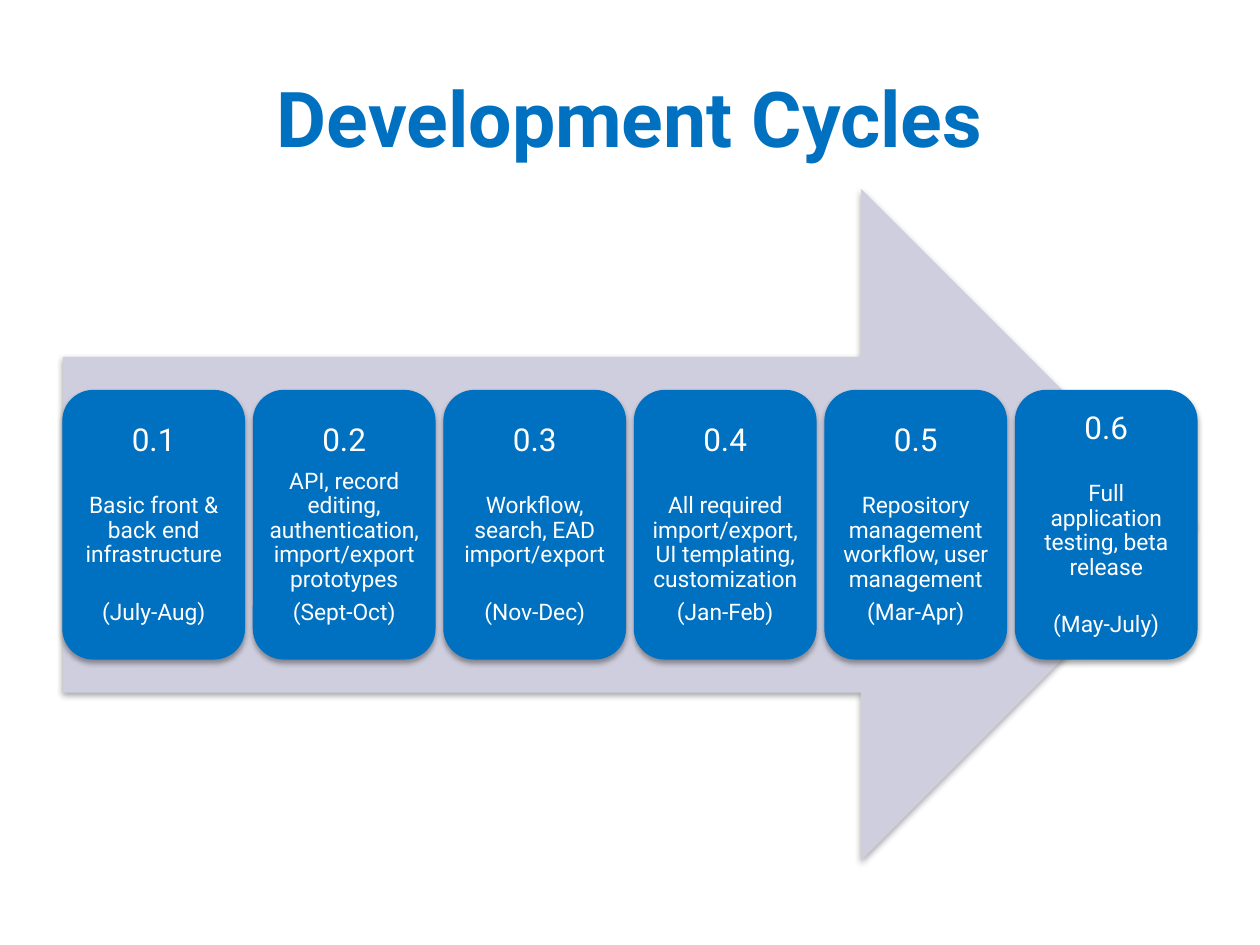
import pptx
import pptx.dml.color
import pptx.enum.shapes
import pptx.enum.text
import pptx.oxml
import pptx.oxml.ns
import pptx.util
from pptx.util import Inches, Pt

# Content: version, work, months, blank lines before work and before months
TITLE = "Development Cycles"
CYCLES = [
    ("0.1", "Basic front & back end infrastructure", "(July-Aug)", 1, 1),
    ("0.2", "API, record editing, authentication, import/export prototypes",
     "(Sept-Oct)", 0, 0),
    ("0.3", "Workflow, search, EAD import/export", "(Nov-Dec)", 1, 1),
    ("0.4", "All required import/export, UI templating, customization",
     "(Jan-Feb)", 1, 0),
    ("0.5", "Repository management workflow, user management",
     "(Mar-Apr)", 1, 0),
    ("0.6", "Full application testing, beta release", "(May-July)", 1, 1),
]

THEME = {
    "font": "Roboto",
    "blue": pptx.dml.color.RGBColor.from_string("0070C0"),
    "lavender": pptx.dml.color.RGBColor.from_string("CECEDE"),
    "white": pptx.dml.color.RGBColor.from_string("FFFFFF"),
    "title": 44,
    "version": 18,
    "detail": 13,
    "blank_line": 14,
    "space_after": 0.35,
}

# Layout in inches
LEFT, SPAN = 0.5, 9
ARROW_TOP, ARROW_HEIGHT = 1.5, 5.33
CARD_WIDTH, CARD_HEIGHT = 1.44, 2.13
CARD_TOP = ARROW_TOP + (ARROW_HEIGHT - CARD_HEIGHT) / 2
PITCH = (SPAN - CARD_WIDTH) / (len(CYCLES) - 1)

SHADOW = (
    f'<a:effectLst {pptx.oxml.ns.nsdecls("a")}>'
    f'<a:outerShdw blurRad="{Pt(3.1)}" dist="{Pt(1.8)}" dir="5400000" rotWithShape="0">'
    '<a:srgbClr val="000000"><a:alpha val="35000"/></a:srgbClr>'
    '</a:outerShdw></a:effectLst>'
)


def add_block(slide, preset, left, top, width, height, fill):
    block = slide.shapes.add_shape(
        preset, Inches(left), Inches(top), Inches(width), Inches(height))
    block.fill.solid()
    block.fill.fore_color.rgb = fill
    block.line.fill.background()
    block.shadow.inherit = False
    properties = block._element.spPr
    effects = properties.find(pptx.oxml.ns.qn("a:effectLst"))
    properties.replace(effects, pptx.oxml.parse_xml(SHADOW))
    return block


def style(paragraph, size, color, bold=False):
    paragraph.alignment = pptx.enum.text.PP_ALIGN.CENTER
    for run in paragraph.runs:
        run.font.name = THEME["font"]
        run.font.size = Pt(size)
        run.font.bold = bold
        run.font.color.rgb = color


def add_card(slide, left, version, work, months, work_gap, months_gap):
    card = add_block(slide, pptx.enum.shapes.MSO_SHAPE.ROUNDED_RECTANGLE,
                     left, CARD_TOP, CARD_WIDTH, CARD_HEIGHT, THEME["blue"])
    card.line.color.rgb = THEME["blue"]
    card.line.width = Pt(0.75)
    frame = card.text_frame
    frame.word_wrap = True
    frame.vertical_anchor = pptx.enum.text.MSO_ANCHOR.MIDDLE
    frame.margin_left = frame.margin_right = Inches(0.05)
    frame.margin_top = frame.margin_bottom = Inches(0.05)
    frame.text = "\n".join((version, work, months))
    sizes = (THEME["version"], THEME["detail"], THEME["detail"])
    gaps = (0, work_gap, months_gap)
    for paragraph, size, gap in zip(frame.paragraphs, sizes, gaps):
        style(paragraph, size, THEME["white"])
        paragraph.line_spacing = 0.9
        paragraph.space_before = Pt(gap * THEME["blank_line"])
        paragraph.space_after = Pt(size * THEME["space_after"])


def main():
    deck = pptx.Presentation()
    deck.slide_width, deck.slide_height = Inches(10), Inches(7.5)
    slide = deck.slides.add_slide(deck.slide_layouts[6])

    # Title
    heading = slide.shapes.add_textbox(
        Inches(LEFT), Inches(0.3), Inches(SPAN), Inches(1.25)).text_frame
    heading.word_wrap = True
    heading.vertical_anchor = pptx.enum.text.MSO_ANCHOR.MIDDLE
    heading.text = TITLE
    style(heading.paragraphs[0], THEME["title"], THEME["blue"], bold=True)

    # Timeline arrow behind the cards
    add_block(slide, pptx.enum.shapes.MSO_SHAPE.RIGHT_ARROW,
              LEFT, ARROW_TOP, SPAN, ARROW_HEIGHT, THEME["lavender"])

    # One card per cycle
    for position, cycle in enumerate(CYCLES):
        add_card(slide, LEFT + position * PITCH, *cycle)

    deck.save("out.pptx")


if __name__ == "__main__":
    main()
